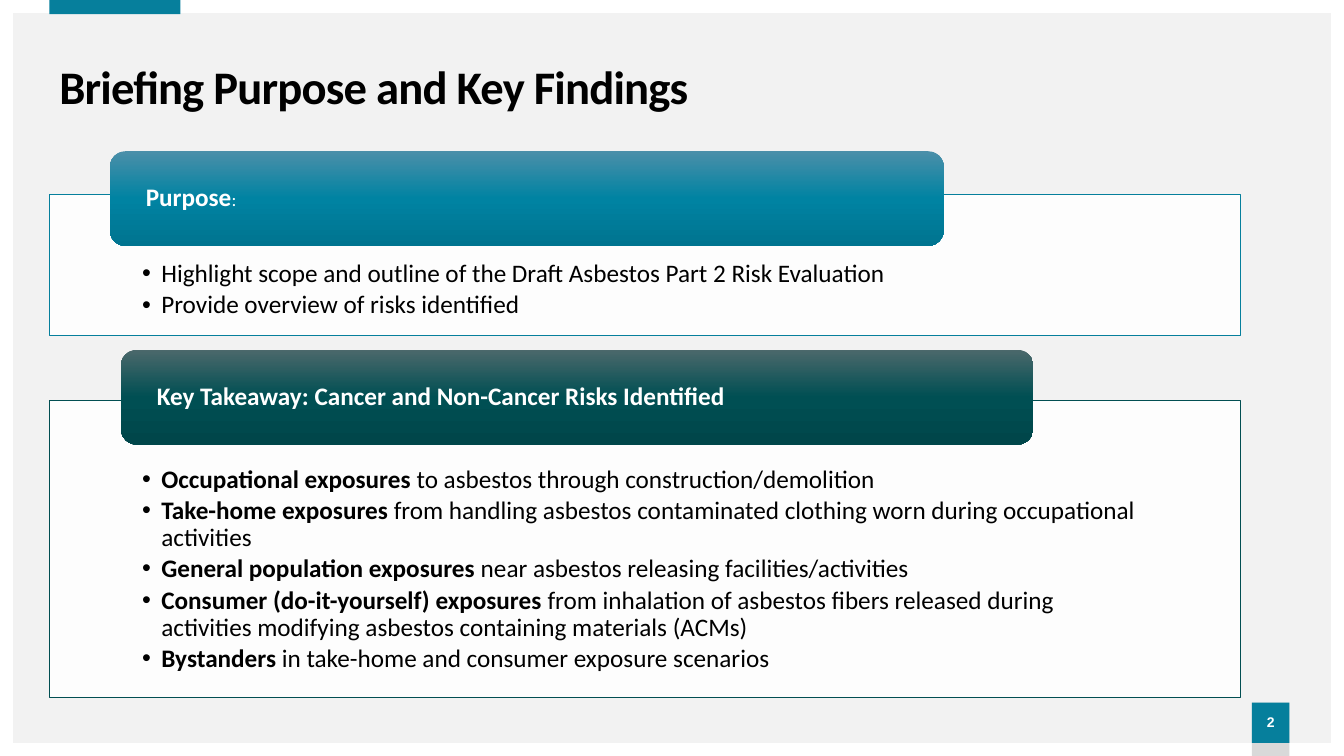
from copy import deepcopy

from lxml import etree
from pptx import Presentation
from pptx import util as u
from pptx.dml.color import RGBColor
from pptx.enum import shapes, text
from pptx.oxml import ns

TEAL, DARK_TEAL = "067F9C", "014E52"
WHITE, BLACK, PALE, GREY = "FFFFFF", "000000", "F2F2F2", "D9D9D9"
RECT = shapes.MSO_SHAPE.RECTANGLE
MIDDLE = text.MSO_ANCHOR.MIDDLE


def color(code):
    return RGBColor.from_string(code)


class Briefing:
    """Draws on one page; places are percentages of the page's width and height."""

    font = "Calibri"
    body_size = 18

    def __init__(self, deck):
        self.deck = deck
        self.page = deck.slides.add_slide(deck.slide_layouts[6])
        self.page.background.fill.solid()
        self.page.background.fill.fore_color.rgb = color(PALE)

    def place(self, left, top, width, height):
        across, down = self.deck.slide_width / 100, self.deck.slide_height / 100
        return [round(n) for n in (left * across, top * down, width * across, height * down)]

    def shape(self, place, fill=None, kind=RECT):
        box = self.page.shapes.add_shape(kind, *self.place(*place))
        box.shadow.inherit = False
        box.line.fill.background()
        if fill:
            box.fill.solid()
            box.fill.fore_color.rgb = color(fill)
        return box

    def frame(self, box, insets, anchor):
        """Sets left, top, right and bottom insets in inches."""
        frame = box.text_frame
        frame.word_wrap = True
        frame.vertical_anchor = anchor
        sides = ("left", "top", "right", "bottom")
        for side, inset in zip(sides, insets):
            setattr(frame, f"margin_{side}", u.Inches(inset))
        return frame

    def add_spans(self, para, spans, fill, spacing=0.9, after=0, align=text.PP_ALIGN.LEFT):
        """Adds spans of (words, bold, size) to a paragraph."""
        para.alignment = align
        para.line_spacing = spacing
        para.space_after = u.Pt(after)
        for words, bold, size in spans:
            span = para.add_run()
            span.text = words
            span.font.name = self.font
            span.font.size = u.Pt(size)
            span.font.bold = bold
            span.font.color.rgb = color(fill)

    def title(self, place, words):
        box = self.page.shapes.add_textbox(*self.place(*place))
        frame = self.frame(box, (0.1, 0.05, 0.1, 0.05), text.MSO_ANCHOR.BOTTOM)
        para = frame.paragraphs[0]
        self.add_spans(para, [(words, True, 33.3)], BLACK, spacing=0.8)
        para.runs[0].font._element.set("spc", "-60")

    def panel(self, place, outline, points):
        """Draws an outlined box of bullets, each a (bold, plain) pair."""
        box = self.shape(place, WHITE)
        solid = box._element.spPr.find(ns.qn("a:solidFill"))
        etree.SubElement(solid[0], ns.qn("a:alpha"), val="90000")
        box.line.color.rgb = color(outline)
        box.line.width = u.Pt(0.5)
        frame = self.frame(box, (0.92, 0.66, 0.92, 0.14), text.MSO_ANCHOR.TOP)
        for number, (bold, plain) in enumerate(points):
            para = frame.add_paragraph() if number else frame.paragraphs[0]
            spans = [(bold, True, self.body_size), (plain, False, self.body_size)]
            self.add_spans(para, [span for span in spans if span[0]], BLACK, after=2.8)
            self.bullet(para)

    def bullet(self, para):
        indent = u.Inches(0.19)
        layout = para._p.get_or_add_pPr()
        layout.set("marL", str(indent))
        layout.set("indent", str(-indent))
        etree.SubElement(layout, ns.qn("a:buFont"), typeface="Arial")
        etree.SubElement(layout, ns.qn("a:buChar"), char="•")

    def heading(self, place, shades, spans):
        """Draws a rounded bar, shaded evenly from top to bottom."""
        box = self.shape(place, kind=shapes.MSO_SHAPE.ROUNDED_RECTANGLE)
        box.fill.gradient()
        box.fill.gradient_angle = 270
        stops = box._element.spPr.find(".//" + ns.qn("a:gsLst"))
        stops.append(deepcopy(stops[0]))
        for number, (stop, shade) in enumerate(zip(box.fill.gradient_stops, shades)):
            stop.position = number / (len(shades) - 1)
            stop.color.rgb = color(shade)
        frame = self.frame(box, (0.31, 0, 0.31, 0), MIDDLE)
        self.add_spans(frame.paragraphs[0], spans, WHITE)

    def page_number(self, place, number):
        frame = self.frame(self.shape(place, TEAL), (0, 0.05, 0, 0.05), MIDDLE)
        para = frame.paragraphs[0]
        self.add_spans(para, [(number, True, 10)], WHITE, align=text.PP_ALIGN.CENTER)
        para.runs[0].font.name = "Arial"


def main():
    deck = Presentation()
    deck.slide_width, deck.slide_height = u.Inches(13.33), u.Inches(7.5)
    briefing = Briefing(deck)

    border = briefing.shape((0, 0, 100, 100), WHITE, shapes.MSO_SHAPE.FRAME)
    border.adjustments[0] = 0.017
    briefing.shape((3.68, 0, 9.75, 1.87), TEAL)
    briefing.shape((93.15, 92.93, 2.78, 7.07), GREY)
    briefing.page_number((93.15, 92.93, 2.78, 5.33), "2")

    briefing.panel((3.68, 25.73, 88.6, 18.67), TEAL, [
        ("", "Highlight scope and outline of the Draft Asbestos Part 2 Risk Evaluation"),
        ("", "Provide overview of risks identified"),
    ])
    briefing.heading((8.18, 20, 62.04, 12.53), ("4B8FA9", "0083A2", "007490"),
                     [("Purpose", True, 18), (":", False, 13)])

    briefing.panel((3.68, 52.93, 88.6, 39.33), DARK_TEAL, [
        ("Occupational exposures ", "to asbestos through construction/demolition"),
        ("Take-home exposures ",
         "from handling asbestos contaminated clothing worn during occupational activities"),
        ("General population exposures", " near asbestos releasing facilities/activities"),
        ("Consumer (do-it-yourself) exposures ",
         "from inhalation of asbestos fibers released during activities modifying "
         "asbestos containing materials (ACMs)"),
        ("Bystanders ", "in take-home and consumer exposure scenarios"),
    ])
    briefing.heading((9, 46.27, 67.89, 12.53), ("4B686B", "004F53", "00464A"),
                     [("Key Takeaway: Cancer and Non-Cancer Risks Identified", True, 18)])

    briefing.title((3.68, 7.73, 91.67, 7.87), "Briefing Purpose and Key Findings")
    deck.save("out.pptx")


if __name__ == "__main__":
    main()
